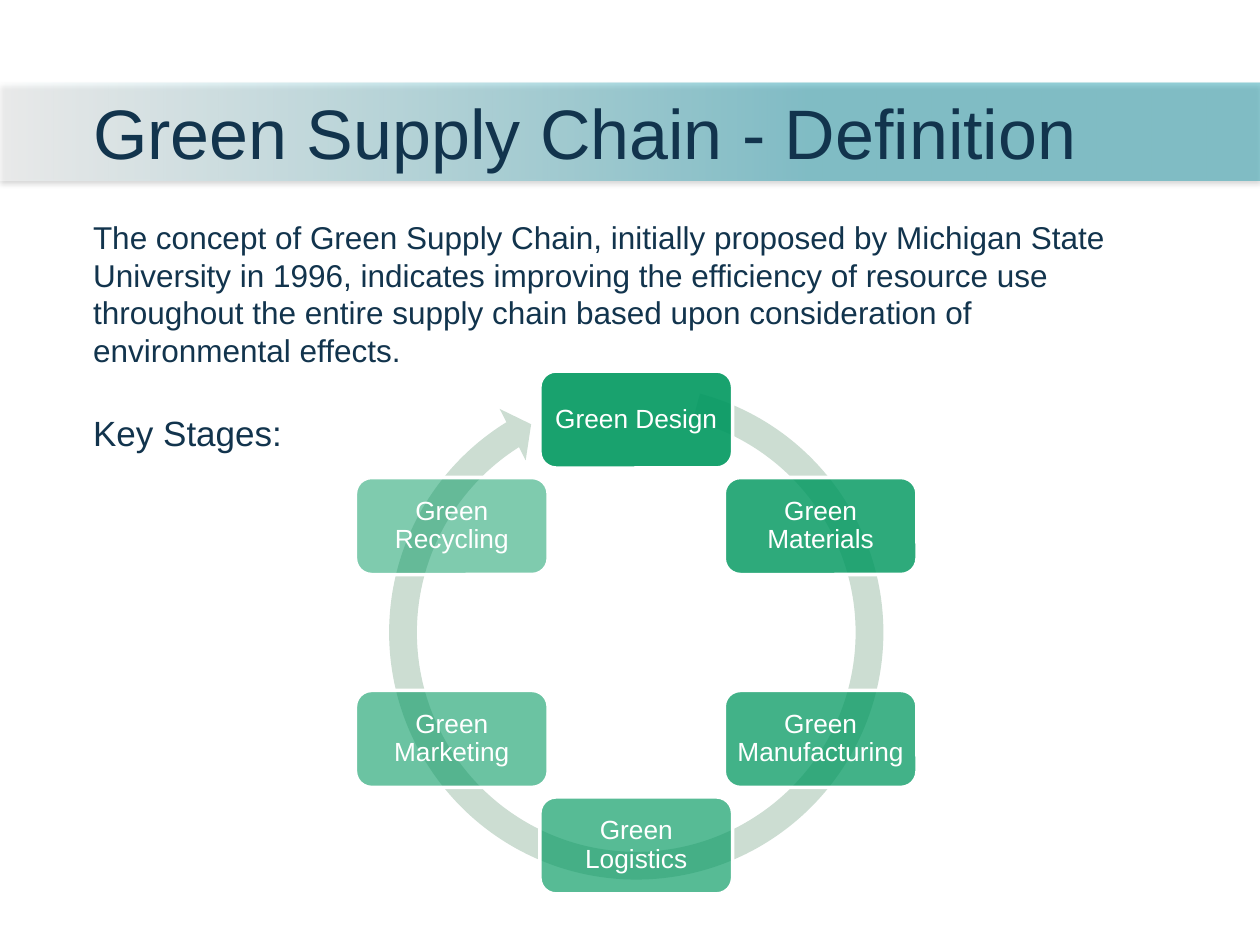
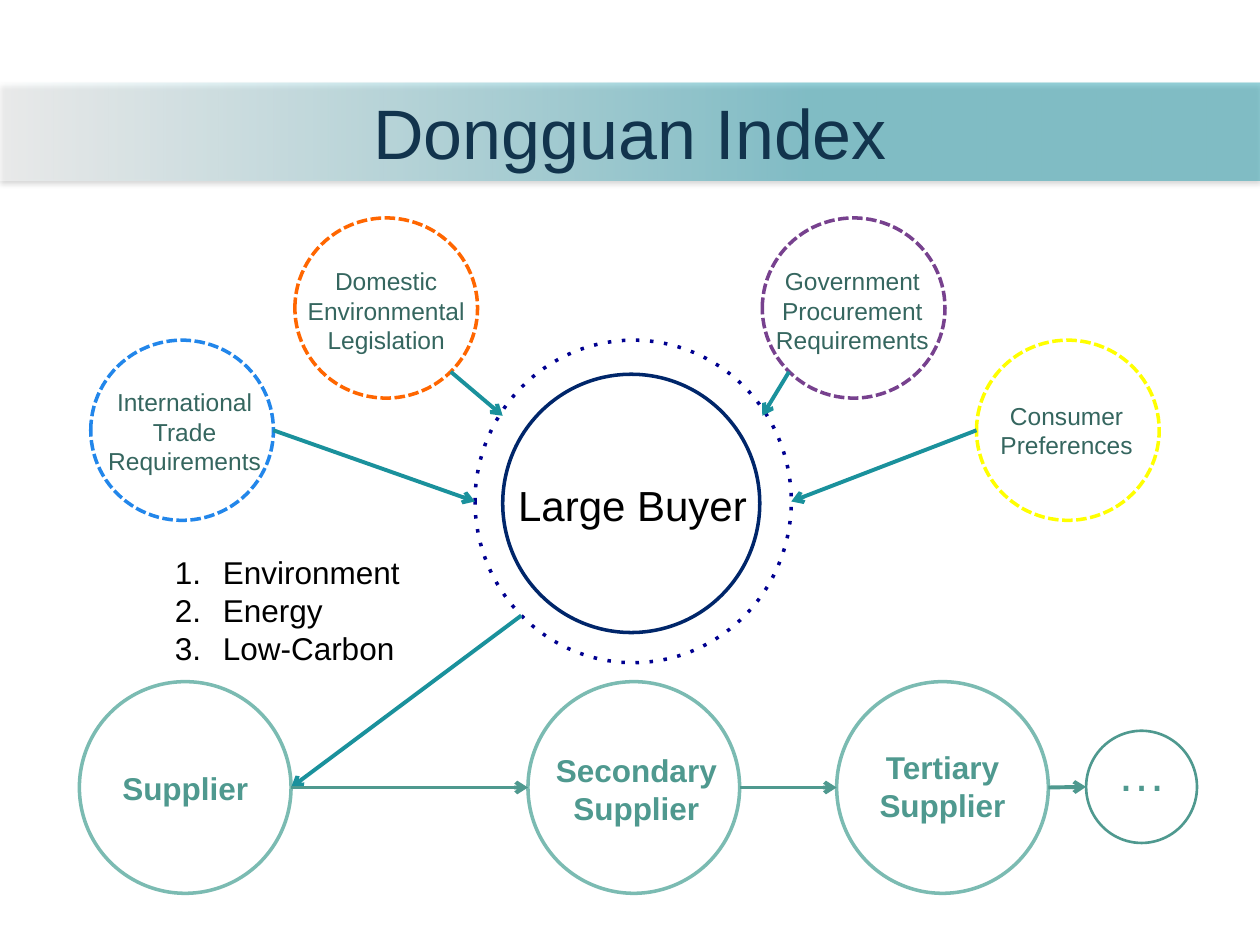
from math import cos, radians, sin
from typing import NamedTuple

from pptx import Presentation
from pptx.dml.color import RGBColor
from pptx.enum.shapes import MSO_CONNECTOR, MSO_SHAPE
from pptx.enum.text import MSO_ANCHOR, PP_ALIGN
from pptx.oxml.ns import qn
from pptx.oxml.xmlchemy import OxmlElement
from pptx.util import Pt

RECT, ROUND, OVAL = MSO_SHAPE.RECTANGLE, MSO_SHAPE.ROUNDED_RECTANGLE, MSO_SHAPE.OVAL
CIRCULAR_ARROW = MSO_SHAPE.CIRCULAR_ARROW
STRAIGHT = MSO_CONNECTOR.STRAIGHT
LEFT, CENTER = PP_ALIGN.LEFT, PP_ALIGN.CENTER
TOP, MIDDLE = MSO_ANCHOR.TOP, MSO_ANCHOR.MIDDLE

EMU_PER_PX = 9144  # 100 px to the inch
FONT = "Arial"
COLORS = {
    "white": "FFFFFF", "black": "000000", "navy": "12344D", "band": "1B9CAF",
    "stage": "00985F", "cycle": "CCDDD2", "driver text": "35665F",
    "blue": "2286EA", "orange": "FF6600", "purple": "77418E", "yellow": "FFFF00",
    "hub": "000090", "buyer": "00266A", "supplier": "7BBBB2",
    "chain": "4F998F", "pressure": "1A919C",
}


class Box(NamedTuple):
    left: float
    top: float
    width: float
    height: float

    def emu(self):
        return [px(length) for length in self]

    def rim(self, degrees):
        """Point on the inscribed ellipse, clockwise from the right."""
        angle = radians(degrees)
        return (self.left + self.width / 2 * (1 + cos(angle)),
                self.top + self.height / 2 * (1 + sin(angle)))

    def centered(self, width, height, nudge=(0, 0)):
        """Box of the given size around this box's centre, shifted by nudge."""
        return Box(self.left + (self.width - width) / 2 + nudge[0],
                   self.top + (self.height - height) / 2 + nudge[1], width, height)


TITLE_BAND = Box(0, 66, 1000, 77)
CONTENT = Box(64, 168, 872, 199)


def px(length):
    return round(length * EMU_PER_PX)


def rgb(name):
    return RGBColor.from_string(COLORS[name])


def add_child(parent, tag, **attributes):
    child = OxmlElement(tag)
    for key, value in attributes.items():
        child.set(key, str(value))
    parent.append(child)
    return child


def set_opacity(color_parent, percent):
    for color in color_parent.iter(qn("a:srgbClr")):
        add_child(color, "a:alpha", val=percent * 1000)


def add_shape(slide, kind, box, fill=None, line=None, weight=2, dash=None):
    shape = slide.shapes.add_shape(kind, *box.emu())
    shape.shadow.inherit = False
    if fill:
        shape.fill.solid()
        shape.fill.fore_color.rgb = rgb(fill)
    else:
        shape.fill.background()
    if line:
        shape.line.color.rgb = rgb(line)
        shape.line.width = Pt(weight)
        if dash:
            add_child(shape._element.spPr.find(qn("a:ln")), "a:prstDash", val=dash)
    else:
        shape.line.fill.background()
    return shape


def style_font(paragraph, size, color, bold=False):
    for run in paragraph.runs:
        run.font.name = FONT
        run.font.size = Pt(size)
        run.font.bold = bold
        run.font.color.rgb = rgb(color)


def add_text(slide, text, box, size, color, align=LEFT, anchor=TOP, bold=False):
    frame = slide.shapes.add_textbox(*box.emu()).text_frame
    frame.word_wrap = True
    frame.vertical_anchor = anchor
    frame.text = text
    for paragraph in frame.paragraphs:
        paragraph.alignment = align
        style_font(paragraph, size, color, bold)
    return frame


def add_arrow(slide, start, end, color):
    arrow = slide.shapes.add_connector(STRAIGHT, *(px(v) for v in (*start, *end)))
    arrow.line.color.rgb = rgb(color)
    arrow.line.width = Pt(2.25)
    properties = arrow._element.spPr
    add_child(properties.find(qn("a:ln")), "a:tailEnd", type="arrow")
    add_child(properties, "a:effectLst")


def add_title_band(slide, title, align=LEFT):
    band = add_shape(slide, RECT, TITLE_BAND)
    band.fill.gradient()
    band.fill.gradient_angle = 0
    for stop, position, color in zip(band.fill.gradient_stops, (0, 0.64), ("white", "band")):
        stop.position = position
        stop.color.rgb = rgb(color)
    properties = band._element.spPr
    set_opacity(properties, 45)
    shadow = add_child(properties.find(qn("a:effectLst")), "a:outerShdw",
                       blurRad=Pt(3.1), dist=Pt(1.8), dir=90 * 60000,
                       algn="ctr", rotWithShape=0)
    add_child(shadow, "a:srgbClr", val=COLORS["black"])
    set_opacity(shadow, 35)
    add_text(slide, title, TITLE_BAND._replace(left=64, width=872), 40, "navy", align)


def add_definition(slide, box):
    definition = (
        "The concept of Green Supply Chain, initially proposed by Michigan State "
        "University in 1996, indicates improving the efficiency of resource use "
        "throughout the entire supply chain based upon consideration of "
        "environmental effects.")
    frame = add_text(slide, f"{definition}\nKey Stages:", box, 18, "navy")
    key_stages = frame.paragraphs[1]
    key_stages.space_before = Pt(24)
    style_font(key_stages, 20, "navy")


def add_stage_cycle(slide, box):
    """Stages clockwise from the top, each paler than the one before."""
    cycle = add_shape(slide, CIRCULAR_ARROW, box, "cycle")
    for index, value in enumerate((0.053, 3.126, 142.809, 170.962, 0.055)):
        cycle.adjustments[index] = value
    orbit = box.centered(338, 338)
    stages = ("Design", "Materials", "Manufacturing", "Logistics", "Marketing", "Recycling")
    for index, stage in enumerate(stages):
        x, y = orbit.rim(60 * index - 90)
        card = add_shape(slide, ROUND, Box(x, y, 0, 0).centered(153, 77), "stage", "white")
        set_opacity(card._element.spPr.find(qn("a:solidFill")), 90 - 8 * index)
        frame = card.text_frame
        frame.margin_left = frame.margin_right = frame.margin_top = frame.margin_bottom = px(6)
        frame.word_wrap = True
        frame.vertical_anchor = MIDDLE
        frame.text = f"Green {stage}"
        paragraph = frame.paragraphs[0]
        paragraph.alignment = CENTER
        paragraph.line_spacing = 0.9
        style_font(paragraph, 15, "white")


def add_buyer(slide, hub):
    add_shape(slide, OVAL, hub, "white", "hub", dash="dot")
    buyer = Box(hub.left + 22, hub.top + 27, 204, 205)
    add_shape(slide, OVAL, buyer, "white", "buyer")
    add_text(slide, "Large Buyer", buyer.centered(206, 50, (1, 1)), 24, "black", CENTER, MIDDLE)


def add_drivers(slide, hub):
    """Outside pressures: place and label shift, then arrow angle and arrow target."""
    upper_y = hub.top + 60
    drivers = (
        ("International Trade Requirements", "blue", (-305, 0), (2, 1), 0, hub.rim(180)),
        ("Consumer Preferences", "yellow", (398, 0), (-1, 0), 180, hub.rim(0)),
        ("Government Procurement Requirements", "purple", (228, -97), (-1, 2), 135,
         (hub.left + 228, upper_y)),
        ("Domestic Environmental Legislation", "orange", (-143, -97), (0, 2), 45,
         (hub.left + 22, upper_y)),
    )
    for text, color, (dx, dy), nudge, angle, target in drivers:
        circle = Box(hub.left + dx, hub.top + dy, 145, 143)
        add_shape(slide, OVAL, circle, "white", color, dash="sysDash")
        add_text(slide, text, circle.centered(145, 81, nudge), 14, "driver text", CENTER, MIDDLE)
        add_arrow(slide, circle.rim(angle), target, "pressure")


def add_supplier_chain(slide, box, hub):
    suppliers = (("Supplier", 0, (0, 0)), ("Secondary Supplier", 356, (2, 1)),
                 ("Tertiary Supplier", 601, (0, -1)))
    circles = []
    for text, offset, nudge in suppliers:
        circle = Box(box.left + offset, box.top, box.height, box.height)
        add_shape(slide, OVAL, circle, "white", "supplier")
        add_text(slide, text, circle.centered(199, 71, nudge), 18, "chain",
                 CENTER, MIDDLE, bold=True)
        circles.append(circle)
    further = Box(box.left + box.width - 88, box.top + 39, 88, 89)
    add_shape(slide, OVAL, further, line="chain", weight=1.5)
    add_text(slide, "…", further.centered(88, 57, (0, -12)), 28, "chain", CENTER, MIDDLE)
    circles.append(further)
    add_arrow(slide, hub.rim(135), circles[0].rim(0), "pressure")
    for giver, taker in zip(circles, circles[1:]):
        add_arrow(slide, giver.rim(0), taker.rim(180), "chain")


def add_criteria(slide, box):
    frame = add_text(slide, "Environment\nEnergy\nLow-Carbon", box, 18, "black")
    for paragraph in frame.paragraphs:
        properties = paragraph._p.get_or_add_pPr()
        properties.set("marL", str(px(38)))
        properties.set("indent", str(-px(38)))
        add_child(properties, "a:buFont", typeface="+mj-lt")
        add_child(properties, "a:buAutoNum", type="arabicPeriod")


def build_definition_slide(slide):
    add_title_band(slide, "Green Supply Chain - Definition")
    add_definition(slide, CONTENT)
    add_stage_cycle(slide, Box(297, 294, 416, 416))


def build_index_slide(slide):
    add_title_band(slide, "Dongguan Index", CENTER)
    hub = Box(377, 270, 251, 256)
    add_buyer(slide, hub)
    add_drivers(slide, hub)
    add_supplier_chain(slide, Box(63, 541, 887, 168), hub)
    add_criteria(slide, Box(129, 434, 205, 101))


def main():
    deck = Presentation()
    deck.slide_width, deck.slide_height = px(1000), px(750)
    for build in (build_definition_slide, build_index_slide):
        build(deck.slides.add_slide(deck.slide_layouts[6]))
    deck.save("out.pptx")


if __name__ == "__main__":
    main()
